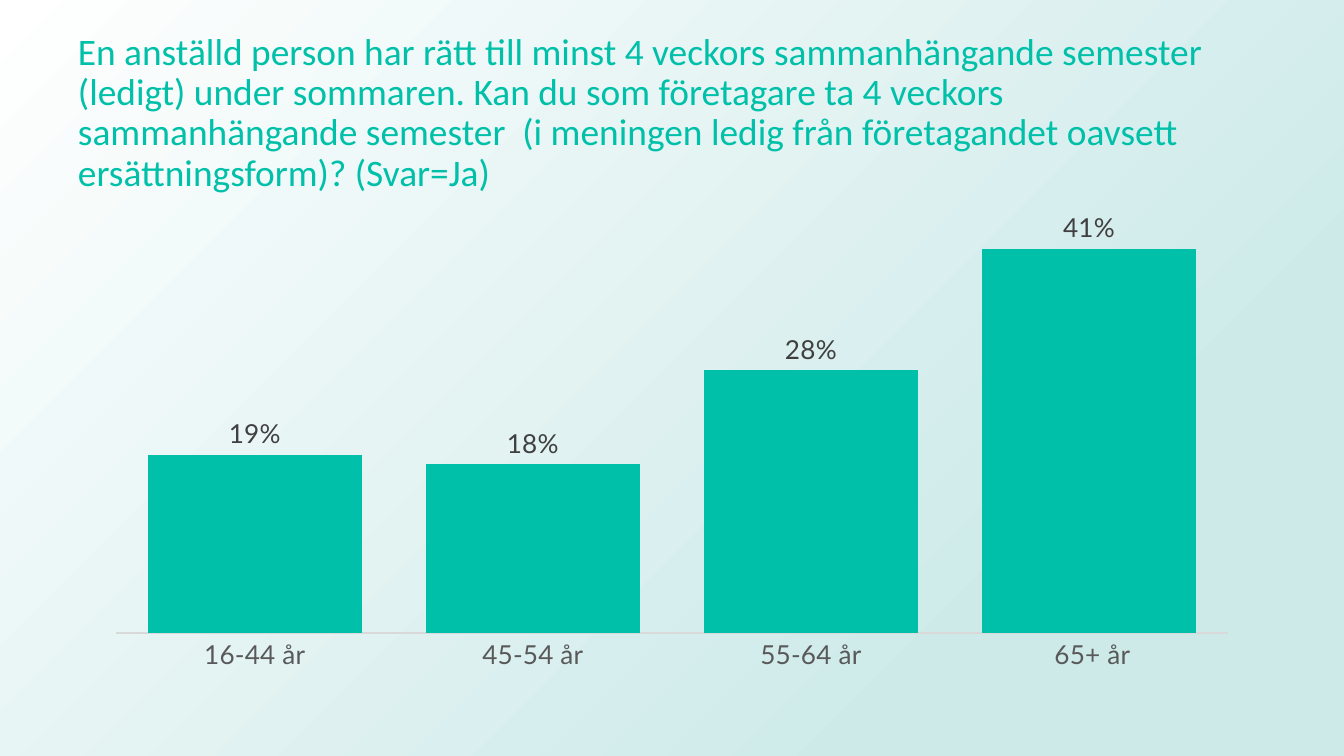
from lxml import etree
from pptx import Presentation
from pptx.chart.data import CategoryChartData
from pptx.dml.color import RGBColor
from pptx.enum.chart import XL_CHART_TYPE, XL_LABEL_POSITION, XL_TICK_MARK
from pptx.enum.shapes import MSO_SHAPE
from pptx.enum.text import MSO_ANCHOR, MSO_AUTO_SIZE, PP_ALIGN
from pptx.oxml import parse_xml
from pptx.oxml.ns import nsdecls, qn
from pptx.util import Inches, Pt

COLUMNS = XL_CHART_TYPE.COLUMN_CLUSTERED
OUTSIDE_END = XL_LABEL_POSITION.OUTSIDE_END
NO_TICK = XL_TICK_MARK.NONE
RECTANGLE = MSO_SHAPE.RECTANGLE
MIDDLE = MSO_ANCHOR.MIDDLE
NO_AUTOFIT = MSO_AUTO_SIZE.NONE
LEFT = PP_ALIGN.LEFT

COLORS = {
    "teal": "00C0A9",
    "mist": "CDEAE9",
    "white": "FFFFFF",
    "black": "000000",
    "axis_text": "595959",
    "label_text": "404040",
    "axis_line": "D9D9D9",
}
PAGE_WIDTH = 10
PAGE_HEIGHT = PAGE_WIDTH * 9 / 16
PAGE_BOX = (0, 0, PAGE_WIDTH, PAGE_HEIGHT)
TITLE_BOX = (0.48, 0.3, 8.83, 1.09)
CHART_BOX = (0.69, 1.5, 8.62, 3.56)

QUESTION = (
    "En anställd person har rätt till minst 4 veckors sammanhängande semester "
    "(ledigt) under sommaren. Kan du som företagare ta 4 veckors "
    "sammanhängande semester  (i meningen ledig från företagandet oavsett "
    "ersättningsform)? (Svar=Ja)"
)
YES_SHARES = {"16-44 år": 0.19, "45-54 år": 0.18, "55-64 år": 0.28, " 65+ år": 0.41}


def color(name):
    return RGBColor.from_string(COLORS[name])


def lengths(box):
    return [Inches(value) for value in box]


def format_font(font, name="Lato", size=14, ink="black"):
    font.name = name
    font.size = Pt(size)
    font.bold = False
    font.color.rgb = color(ink)


def write_text(frame, text, line_spacing=1.0, align=LEFT, **font_format):
    para = frame.paragraphs[0]
    para.alignment = align
    para.line_spacing = line_spacing
    span = para.add_run()
    span.text = text
    format_font(span.font, **font_format)


def add_background(page, box):
    """Cover the box with a gradient that radiates from its bottom right corner."""
    panel = page.shapes.add_shape(RECTANGLE, *lengths(box))
    panel.shadow.inherit = False
    panel.line.fill.background()
    panel.fill.gradient()
    for stop, position, name in zip(
        panel.fill.gradient_stops, (0.23, 1), ("mist", "white")
    ):
        stop.position = position
        stop.color.rgb = color(name)
    gradient = panel.fill._xPr.find(qn("a:gradFill"))
    linear = gradient.find(qn("a:lin"))
    circle = parse_xml(f'<a:path {nsdecls("a")} path="circle"/>')
    etree.SubElement(circle, qn("a:fillToRect"), l="100000", t="100000")
    gradient.replace(linear, circle)
    page.shapes._spTree.insert(2, panel._element)


def place_title(page, box):
    title = page.shapes.title
    title.left, title.top, title.width, title.height = lengths(box)
    frame = title.text_frame
    frame.word_wrap = True
    frame.auto_size = NO_AUTOFIT
    frame.vertical_anchor = MIDDLE
    write_text(frame, QUESTION, line_spacing=0.9, name="Calibri", size=20, ink="teal")


def add_share_chart(page, box):
    data = CategoryChartData(number_format="0%")
    data.categories = YES_SHARES.keys()
    data.add_series("Series 1", YES_SHARES.values())
    chart = page.shapes.add_chart(COLUMNS, *lengths(box), data).chart
    chart.has_legend = False
    chart.has_title = False
    format_font(chart.font)

    ages = chart.category_axis
    ages.major_tick_mark = ages.minor_tick_mark = NO_TICK
    ages.format.line.color.rgb = color("axis_line")
    ages.format.line.width = Pt(0.75)
    format_font(ages.tick_labels.font, ink="axis_text")

    shares = chart.value_axis
    shares.visible = False
    shares.has_major_gridlines = False
    shares.minimum_scale = 0
    shares.maximum_scale = 0.45
    shares.tick_labels.number_format = "0%"
    shares.tick_labels.number_format_is_linked = False

    plot = chart.plots[0]
    plot.gap_width = 30
    plot.vary_by_categories = False
    bars = plot.series[0]
    bars.format.fill.solid()
    bars.format.fill.fore_color.rgb = color("teal")
    labels = bars.data_labels
    labels.show_value = True
    labels.position = OUTSIDE_END
    labels.number_format = "0%"
    labels.number_format_is_linked = False
    format_font(labels.font, ink="label_text")


def main():
    deck = Presentation()
    deck.slide_width, deck.slide_height = lengths(PAGE_BOX[2:])
    page = deck.slides.add_slide(deck.slide_layouts[5])
    add_background(page, PAGE_BOX)
    place_title(page, TITLE_BOX)
    add_share_chart(page, CHART_BOX)
    deck.save("out.pptx")


if __name__ == "__main__":
    main()
